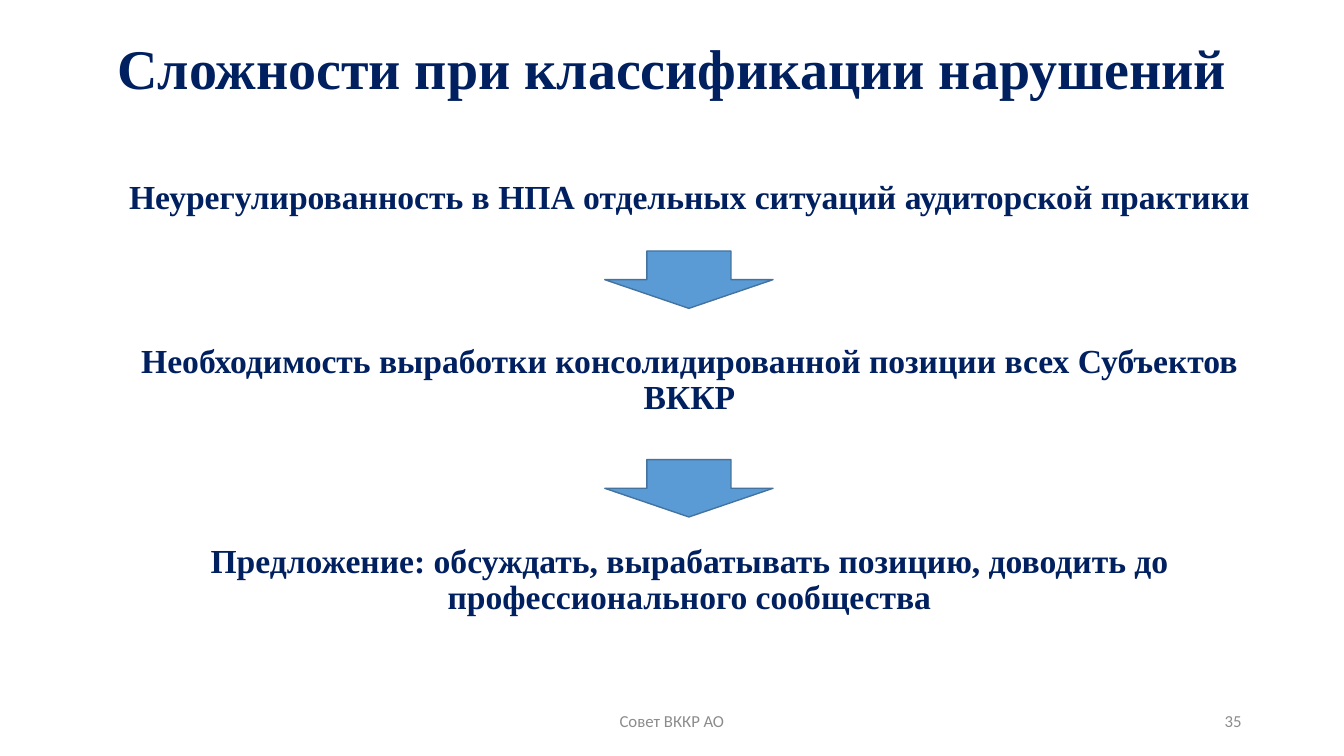
from dataclasses import dataclass

from pptx import Presentation
from pptx.dml.color import RGBColor
from pptx.enum.shapes import MSO_SHAPE
from pptx.enum.text import MSO_ANCHOR, PP_ALIGN
from pptx.slide import Slide
from pptx.util import Pt

COLORS = {"navy": "002060", "gray": "8C8C8C", "arrow": "5B9BD5", "outline": "43739E"}


@dataclass
class TextBlock:
    left: float
    top: float
    width: float
    height: float
    paragraphs: list[str]
    size: float
    font: str = "Times New Roman"
    color: str = "navy"
    bold: bool = True
    align: PP_ALIGN = PP_ALIGN.CENTER
    anchor: MSO_ANCHOR = MSO_ANCHOR.MIDDLE
    line_spacing: float = 0.9
    gap: float = 0


@dataclass
class Arrow:
    top: float
    left: float = 432
    width: float = 120.2
    height: float = 41


TEXT_BLOCKS = [
    TextBlock(66, 13.5, 828, 75.6, ["Сложности при классификации нарушений"], 40),
    TextBlock(
        78.5, 125.3, 828, 389.5,
        [
            "Неурегулированность в НПА отдельных ситуаций аудиторской практики",
            "Необходимость выработки консолидированной позиции всех Субъектов ВККР",
            "Предложение: обсуждать, вырабатывать позицию, доводить до профессионального сообщества",
        ],
        24, anchor=MSO_ANCHOR.TOP, gap=91,
    ),
    TextBlock(318, 500.5, 324, 28.8, ["Совет ВККР АО"], 12, "Calibri", "gray", False,
              line_spacing=1),
    TextBlock(678, 500.5, 216, 28.8, ["35"], 12, "Calibri", "gray", False,
              PP_ALIGN.RIGHT, line_spacing=1),
]
ARROWS = [Arrow(179.3), Arrow(328.3)]


def rgb(name: str) -> RGBColor:
    return RGBColor.from_string(COLORS[name])


def draw_text(slide: Slide, block: TextBlock) -> None:
    sp = slide.shapes.add_textbox(Pt(block.left), Pt(block.top), Pt(block.width), Pt(block.height))
    tf = sp.text_frame
    tf.word_wrap = True
    tf.vertical_anchor = block.anchor
    for i, text in enumerate(block.paragraphs):
        p = tf.add_paragraph() if i else tf.paragraphs[0]
        p.text = text
        p.alignment = block.align
        p.line_spacing = block.line_spacing
        if i:
            p.space_before = Pt(block.gap)
        p.font.name = block.font
        p.font.size = Pt(block.size)
        p.font.bold = block.bold
        p.font.color.rgb = rgb(block.color)


def draw_arrow(slide: Slide, arrow: Arrow) -> None:
    sp = slide.shapes.add_shape(MSO_SHAPE.DOWN_ARROW, Pt(arrow.left), Pt(arrow.top),
                                Pt(arrow.width), Pt(arrow.height))
    sp.shadow.inherit = False
    sp.fill.solid()
    sp.fill.fore_color.rgb = rgb("arrow")
    sp.line.color.rgb = rgb("outline")
    sp.line.width = Pt(1)


def main() -> None:
    prs = Presentation()
    prs.slide_width, prs.slide_height = Pt(960), Pt(540)
    slide = prs.slides.add_slide(prs.slide_layouts[6])
    for block in TEXT_BLOCKS:
        draw_text(slide, block)
    for arrow in ARROWS:
        draw_arrow(slide, arrow)
    prs.save("out.pptx")


if __name__ == "__main__":
    main()
